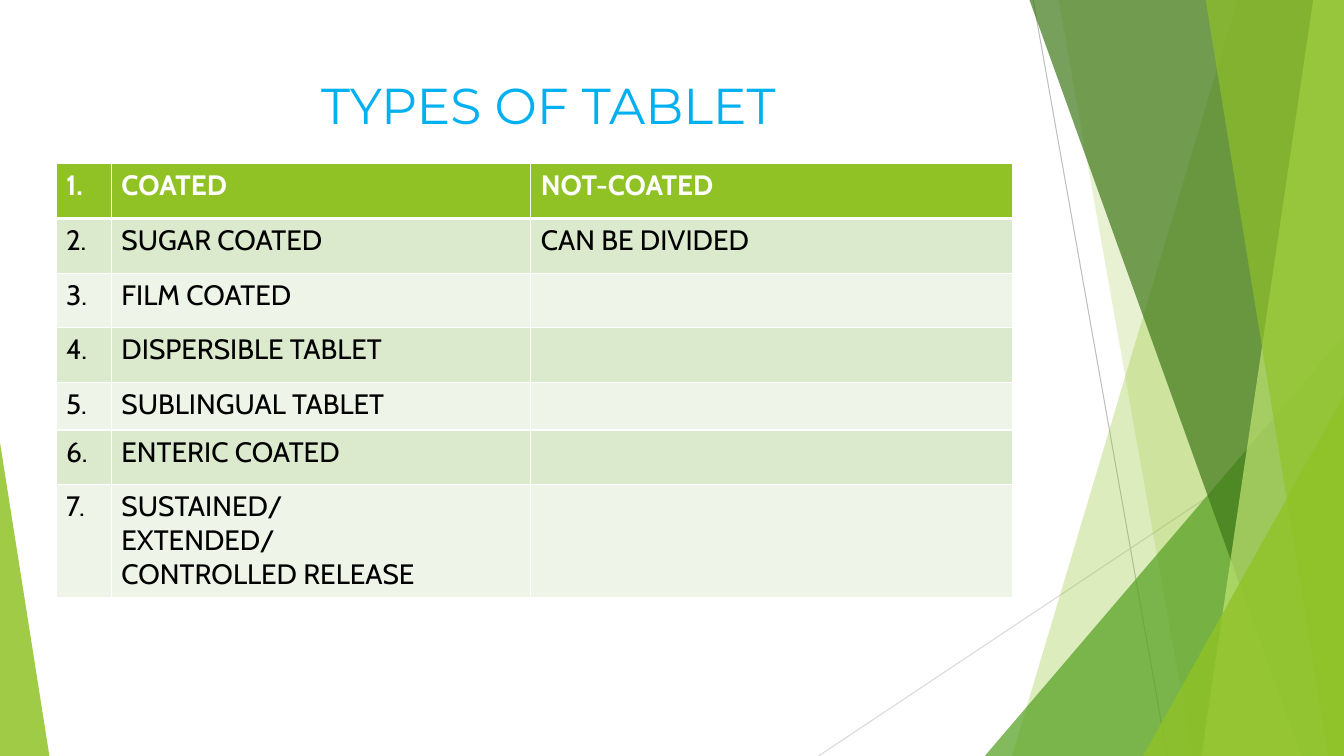
from dataclasses import dataclass

from lxml import etree
from pptx import Presentation
from pptx import util as u
from pptx.dml.color import RGBColor
from pptx.enum import shapes, text
from pptx.oxml import ns

Pt = u.Pt
WIDE, HIGH, TOP = 960, 540, -0.72
HEX = {
    "lime": "90C226", "green": "54A021", "forest": "3F7819", "pale": "C0E474",
    "white": "FFFFFF", "black": "000000", "sky": "00B0F0",
    "grey": "BFBFBF", "silver": "D9D9D9", "odd": "DBE9CD", "even": "EEF4E8",
}


@dataclass
class Ray:
    x1: float
    y1: float
    x2: float
    y2: float
    hue: str


@dataclass
class Band:
    top: float
    base: float
    hue: str
    alpha: int


@dataclass
class Spike:
    left: float
    top: float
    width: float
    tip: int
    hue: str
    alpha: int


RAYS = [
    Ray(738, 0, 833.76, HIGH, "grey"),
    Ray(WIDE, 290.16, 584.64, HIGH, "silver"),
]
FACETS = [
    Band(884.16, 722.88, "lime", 30),
    Band(756, 851.76, "lime", 20),
    Spike(703.44, 239.76, 256.56, 1, "green", 72),
    Band(735.12, 929.52, "forest", 70),
    Band(938.16, 858.24, "pale", 70),
    Band(861.12, 948.96, "lime", 65),
    Spike(816.48, 282.96, 143.52, 1, "lime", 80),
    Spike(0, 316.08, 35.28, 0, "lime", 85),
]
ROWS = [
    ("COATED", "NOT-COATED"),
    ("SUGAR COATED", "CAN BE DIVIDED"),
    ("FILM COATED", ""),
    ("DISPERSIBLE TABLET", ""),
    ("SUBLINGUAL TABLET", ""),
    ("ENTERIC COATED", ""),
    ("SUSTAINED/\nEXTENDED/\nCONTROLLED RELEASE", ""),
]
COLS = [39.6, 299.52, 344.16]
TALL = [39.1] * 4 + [33.84, 39.1, 79.2]


def tint(name: str) -> RGBColor:
    return RGBColor.from_string(HEX[name])


def apply(item, form: dict) -> None:
    for key, value in form.items():
        setattr(item, key, value)


def add(node, tag: str, **attrs: str):
    return etree.SubElement(node, ns.qn(tag), attrs)


def draw_ray(slide, ray: Ray) -> None:
    line = slide.shapes.add_connector(
        shapes.MSO_CONNECTOR.STRAIGHT,
        Pt(ray.x1), Pt(ray.y1), Pt(ray.x2), Pt(ray.y2))
    line.line.color.rgb = tint(ray.hue)
    line.line.width = Pt(0.75)
    add(line._element.spPr, "a:effectLst")


def draw_facet(slide, part: Band | Spike) -> None:
    if isinstance(part, Band):
        pen = slide.shapes.build_freeform(Pt(part.top), Pt(TOP))
        pen.add_line_segments([
            (Pt(WIDE), Pt(TOP)), (Pt(WIDE), Pt(HIGH)), (Pt(part.base), Pt(HIGH))])
        shape = pen.convert_to_shape()
    else:
        shape = slide.shapes.add_shape(
            shapes.MSO_SHAPE.ISOSCELES_TRIANGLE, Pt(part.left), Pt(part.top),
            Pt(part.width), Pt(HIGH - part.top))
        shape.adjustments[0] = part.tip
    shape.shadow.inherit = False
    shape.line.fill.background()
    shape.fill.solid()
    shape.fill.fore_color.rgb = tint(part.hue)
    color = shape._element.spPr.find(ns.qn("a:solidFill"))[0]
    add(color, "a:alpha", val=str(part.alpha * 1000))


def draw_title(slide) -> None:
    title = slide.shapes.title
    apply(title, {"left": Pt(53.28), "top": Pt(48.24),
                  "width": Pt(676.8), "height": Pt(52.56)})
    frame = title.text_frame
    frame.text = "TYPES OF TABLET"
    apply(frame, {"vertical_anchor": text.MSO_ANCHOR.MIDDLE, "word_wrap": True})
    line = frame.paragraphs[0]
    line.alignment = text.PP_ALIGN.CENTER
    apply(line.runs[0].font, {"name": "Montserrat", "size": Pt(36), "bold": False})
    line.runs[0].font.color.rgb = tint("sky")


def draw_cell(cell, words: str, row: int) -> None:
    head = row == 0
    props = cell._tc.get_or_add_tcPr()
    for side in "LRTB":
        thick = (side == "B" and head) or (side == "T" and row == 1)
        edge = add(props, f"a:ln{side}", w=str(Pt(3 if thick else 1)))
        add(add(edge, "a:solidFill"), "a:srgbClr", val=HEX["white"])
    cell.fill.solid()
    cell.fill.fore_color.rgb = tint("lime" if head else "odd" if row % 2 else "even")
    cell.text = words
    for line in cell.text_frame.paragraphs:
        for run in line.runs:
            apply(run.font, {"name": "Cabin", "size": Pt(20), "bold": head})
            run.font.color.rgb = tint("white" if head else "black")


def draw_table(slide) -> None:
    table = slide.shapes.add_table(
        len(ROWS), len(COLS), Pt(39.96), Pt(116.9), Pt(sum(COLS)), Pt(sum(TALL))).table
    for col, width in zip(table.columns, COLS):
        col.width = Pt(width)
    for row, (pair, height) in enumerate(zip(ROWS, TALL)):
        table.rows[row].height = Pt(height)
        for col, words in enumerate((f"{row + 1}.", *pair)):
            draw_cell(table.cell(row, col), words, row)


def main() -> None:
    deck = Presentation()
    apply(deck, {"slide_width": Pt(WIDE), "slide_height": Pt(HIGH)})
    slide = deck.slides.add_slide(deck.slide_layouts[5])
    for ray in RAYS:
        draw_ray(slide, ray)
    for part in FACETS:
        draw_facet(slide, part)
    draw_title(slide)
    draw_table(slide)
    deck.save("out.pptx")


if __name__ == "__main__":
    main()
